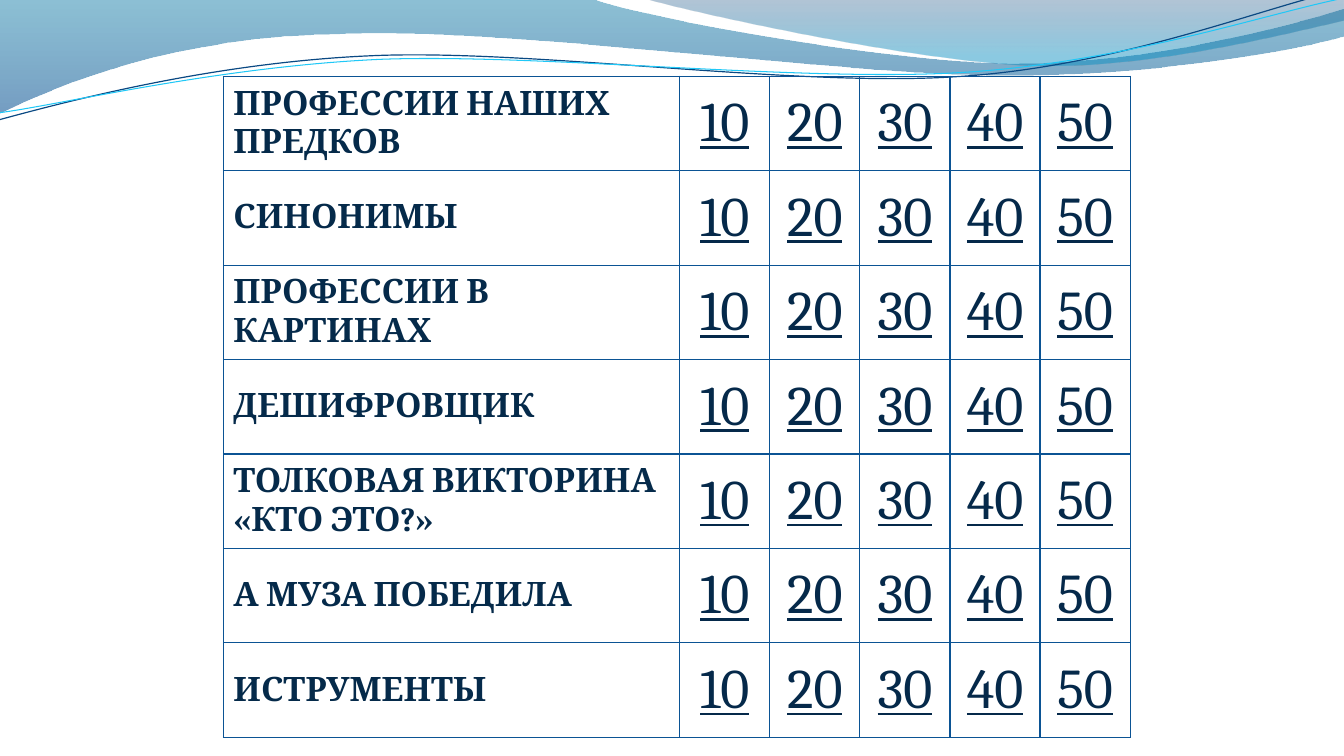
from lxml import etree
from pptx import Presentation
from pptx import util as u
from pptx.dml import color
from pptx.enum import text
from pptx.oxml import ns

TOPICS = [
    "ПРОФЕССИИ НАШИХ ПРЕДКОВ",
    "СИНОНИМЫ",
    "ПРОФЕССИИ В КАРТИНАХ",
    "ДЕШИФРОВЩИК",
    "ТОЛКОВАЯ ВИКТОРИНА «КТО ЭТО?»",
    "А МУЗА ПОБЕДИЛА",
    "ИСТРУМЕНТЫ",
]
SCORES = [10, 20, 30, 40, 50]

# Each route is a start point, then steps: one point for a line, three for a curve.
BAND = [
    (0, 0),
    [(14.91, -0.03)],
    [(16.1, 0.43), (22.48, 1.6), (25.68, 1.6)],
    [(28.91, 1.6), (32.46, 0.66), (33.86, 0.23)],
    [(33.91, 0.91)],
    [(33.3, 1.12), (29.46, 1.93), (25.25, 1.9)],
    [(21.06, 1.9), (12.93, 0.71), (8.71, 0.86)],
    [(4.37, 0.91), (1.55, 2.11), (-0.03, 2.87)],
    [(0, 0)],
]
CREST = [
    (16.23, -0.03),
    [(17.25, 0.28), (23.09, 1.57), (26.04, 1.65)],
    [(28.98, 1.75), (32.56, 0.81), (33.86, 0.53)],
    [(33.86, 0)],
    [(16.23, -0.03)],
]
NAVY = [
    (-0.08, 2.22),
    [(1.6, 1.85), (5.36, 1.03), (9.38, 1.05)],
    [(13.4, 1.06), (20.03, 2.36), (24.1, 2.27)],
    [(28.17, 2.21), (31.84, 0.9), (33.87, 0.55)],
]
CYAN = [
    (-0.04, 2.04),
    [(1.57, 1.9), (5.54, 1.14), (9.61, 1.15)],
    [(13.65, 1.19), (20.19, 2.23), (24.24, 2.17)],
    [(28.3, 2.11), (31.91, 1.06), (33.93, 0.75)],
]


def rgb(code):
    return color.RGBColor.from_string(code)


def trace(slide, route, close):
    start, *steps = route
    dots = [(u.Cm(x), u.Cm(y)) for step in steps for x, y in step]
    pen = slide.shapes.build_freeform(u.Cm(start[0]), u.Cm(start[1]))
    pen.add_line_segments(dots, close=close)
    shape = pen.convert_to_shape()
    shape.shadow.inherit = False
    lines = iter(list(shape._element.iter(ns.qn("a:lnTo"))))
    for step in steps:
        first, *rest = [next(lines) for dot in step]
        if rest:
            first.tag = ns.qn("a:cubicBezTo")
        for line in rest:
            first.append(line[0])
            line.getparent().remove(line)
    return shape


def add_wave(slide, route, stops):
    wave = trace(slide, route, True)
    wave.line.fill.background()
    wave.fill.gradient()
    wave.fill.gradient_angle = 270
    for stop, (place, code, alpha) in zip(wave.fill.gradient_stops, stops):
        stop.position = place
        stop.color.rgb = rgb(code)
    tints = wave.fill._xPr.iter(ns.qn("a:srgbClr"))
    for tint, (place, code, alpha) in zip(tints, stops):
        etree.SubElement(tint, ns.qn("a:alpha"), val=str(alpha * 1000))


def add_curve(slide, route, code, width):
    curve = trace(slide, route, False)
    curve.rotation = 357.3
    curve.fill.background()
    curve.line.color.rgb = rgb(code)
    curve.line.width = u.Pt(width)


def make_line(tag, code, width):
    line = etree.Element(ns.qn(tag), w=str(u.Pt(width)))
    fill = etree.SubElement(line, ns.qn("a:solidFill"))
    etree.SubElement(fill, ns.qn("a:srgbClr"), val=code)
    return line


def set_cell(cell, words, size, code):
    cell.fill.background()
    cell.vertical_anchor = text.MSO_ANCHOR.MIDDLE
    for i, side in enumerate("LRTB"):
        cell._tc.get_or_add_tcPr().insert(i, make_line("a:ln" + side, "0B5394", 1))
    par = cell.text_frame.paragraphs[0]
    par.text = words
    par.font.name = "Cambria"
    par.font.size = u.Pt(size)
    par.font.color.rgb = rgb(code)
    return par


def add_board(slide):
    rows, cols = len(TOPICS), len(SCORES) + 1
    frame = slide.shapes.add_table(
        rows, cols, u.Cm(5.63), u.Cm(1.92), u.Cm(22.85), u.Cm(16.66)
    )
    board = frame.table
    board.first_row = board.horz_banding = False
    for i, col in enumerate(board.columns):
        col.width = u.Cm(2.27 if i else 11.5)
    for y, topic in enumerate(TOPICS):
        board.rows[y].height = u.Cm(2.38)
        par = set_cell(board.cell(y, 0), topic, 24, "052A4A")
        par.font.bold = True
        par.font._rPr.insert(0, make_line("a:ln", "14C3F4", 0.83))
        for x, score in enumerate(SCORES, 1):
            par = set_cell(board.cell(y, x), str(score), 40, "05294A")
            par.alignment = text.PP_ALIGN.CENTER
            par.font.underline = True


def main():
    deck = Presentation()
    deck.slide_width, deck.slide_height = u.Cm(33.87), u.Cm(19.05)
    slide = deck.slides.add_slide(deck.slide_layouts[6])
    add_wave(slide, BAND, [(0, "0074A1", 45), (1, "004C90", 55)])
    add_wave(slide, CREST, [(0, "003E76", 30), (0.8, "008BBF", 45)])
    add_curve(slide, NAVY, "0A4983", 0.85)
    add_curve(slide, CYAN, "20C8F7", 0.75)
    add_board(slide)
    deck.save("out.pptx")


if __name__ == "__main__":
    main()
